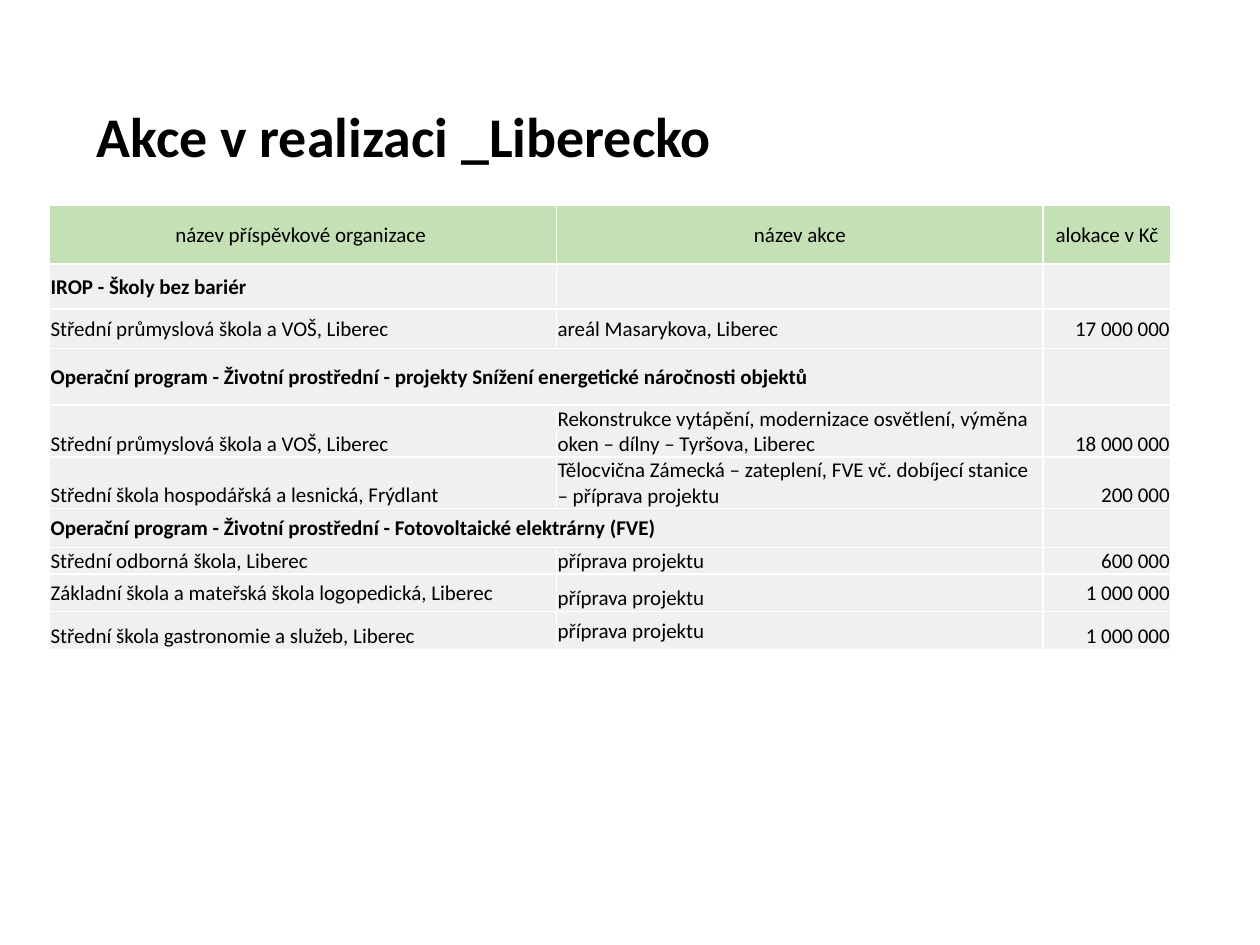
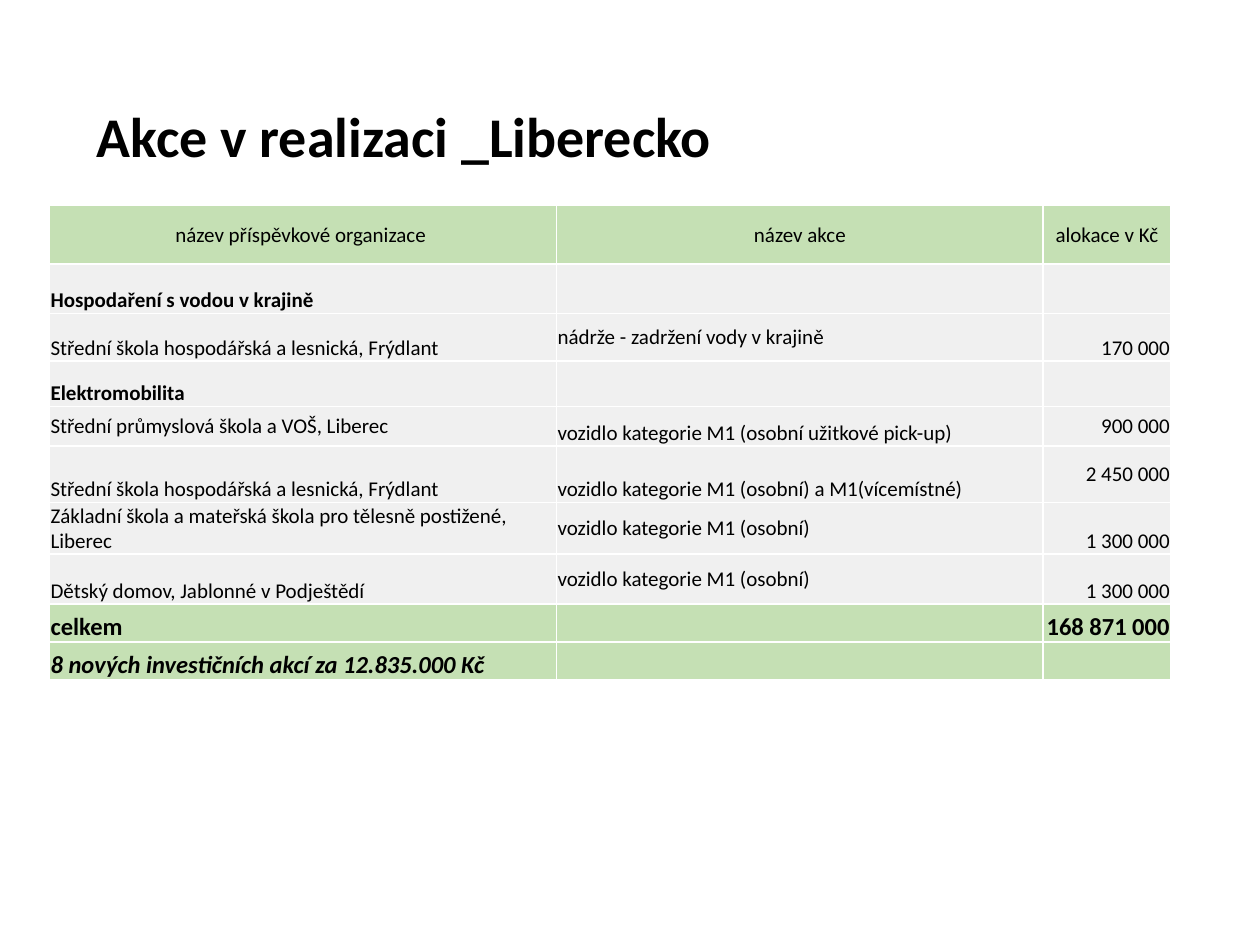
from dataclasses import dataclass

from lxml.etree import SubElement
from pptx import Presentation
from pptx.dml.color import RGBColor
from pptx.enum.text import MSO_ANCHOR, PP_ALIGN
from pptx.oxml.ns import qn
from pptx.util import Cm, Pt


@dataclass(frozen=True)
class Theme:
    font: str = "Calibri"
    ink: str = "000000"
    green: str = "C5E0B4"
    grey: str = "F0F0F0"
    border: str = "FFFFFF"
    title_size: int = 32
    body_size: int = 12
    total_size: int = 14


@dataclass(frozen=True)
class Row:
    """One table row; anchors holds a letter per column (m = middle, b = bottom)."""
    height: float
    texts: tuple
    anchors: str = "mmm"
    look: str = "item"
    wide: bool = False


THEME = Theme()
LOOKS = {
    "header": dict(fill=THEME.green, size=THEME.body_size, bold=False, italic=False),
    "program": dict(fill=THEME.grey, size=THEME.body_size, bold=True, italic=False),
    "item": dict(fill=THEME.grey, size=THEME.body_size, bold=False, italic=False),
    "total": dict(fill=THEME.green, size=THEME.total_size, bold=True, italic=False),
    "summary": dict(fill=THEME.green, size=THEME.total_size, bold=True, italic=True),
}
ANCHORS = {"m": MSO_ANCHOR.MIDDLE, "b": MSO_ANCHOR.BOTTOM}
ITEM_ALIGNS = (PP_ALIGN.LEFT, PP_ALIGN.LEFT, PP_ALIGN.RIGHT)
CELL_MARGINS = dict(margin_left=Cm(0.02), margin_right=Cm(0.02),
                    margin_top=Cm(0.02), margin_bottom=0)

TITLE = "Akce v realizaci _Liberecko"
COLUMN_WIDTHS = (10.22, 9.81, 2.57)
HEADER = Row(1.19, ("název příspěvkové organizace ", "název akce", "alokace v Kč"),
             look="header")

INDUSTRIAL = "Střední průmyslová škola a VOŠ, Liberec"
FORESTRY = "Střední škola hospodářská a lesnická, Frýdlant"
PREPARATION = "příprava projektu"
CAR = "vozidlo kategorie M1 (osobní)"

BUILDINGS = (
    Row(0.91, ("IROP - Školy bez bariér", "", ""), look="program"),
    Row(0.8, (INDUSTRIAL, "areál Masarykova, Liberec", "17 000 000")),
    Row(1.14, ("Operační program - Životní prostřední - projekty Snížení "
               "energetické náročnosti objektů", "", ""), look="program", wide=True),
    Row(1.04, (INDUSTRIAL, "Rekonstrukce vytápění, modernizace osvětlení, výměna "
               "oken – dílny – Tyršova, Liberec", "18 000 000"), "bmb"),
    Row(1.04, (FORESTRY, "Tělocvična Zámecká – zateplení, FVE vč. dobíjecí stanice "
               "– příprava projektu", "200 000"), "bbb"),
    Row(0.79, ("Operační program - Životní prostřední - Fotovoltaické elektrárny (FVE)",
               "", ""), look="program", wide=True),
    Row(0.53, ("Střední odborná škola, Liberec", PREPARATION, "600 000"), "mbm"),
    Row(0.76, ("Základní škola a mateřská škola logopedická, Liberec", PREPARATION,
               "1 000 000"), "mbm"),
    Row(0.76, ("Střední škola gastronomie a služeb, Liberec", PREPARATION,
               "1 000 000"), "bmb"),
)

WATER_AND_CARS = (
    Row(1.0, ("Hospodaření s vodou v krajině", "", ""), "bbb", "program"),
    Row(0.96, (FORESTRY, "nádrže - zadržení vody v krajině", "170 000"), "bmb"),
    Row(0.91, ("Elektromobilita", "", ""), "bbb", "program"),
    Row(0.8, (INDUSTRIAL, "vozidlo kategorie M1 (osobní užitkové pick-up)",
              "900 000"), "mbm"),
    Row(1.14, (FORESTRY, "vozidlo kategorie M1 (osobní) a M1(vícemístné)",
               "2 450 000"), "bbm"),
    Row(1.04, ("Základní škola a mateřská škola pro tělesně postižené, Liberec", CAR,
               "1 300 000"), "bmb"),
    Row(1.01, ("Dětský domov, Jablonné v Podještědí", CAR, "1 300 000"), "bmb"),
    Row(0.76, ("celkem", "", "168 871 000"), "bbb", "total"),
    Row(0.76, ("8 nových investičních akcí za 12.835.000 Kč", "", ""), "bbb", "summary"),
)


def apply(target, values):
    for name, value in values.items():
        setattr(target, name, value)


class Deck:
    def __init__(self, theme):
        self.theme = theme
        self.presentation = Presentation()
        apply(self.presentation, dict(slide_width=Cm(25.4), slide_height=Cm(19.05)))
        self.slide = None

    def new_slide(self):
        blank = self.presentation.slide_layouts[6]
        self.slide = self.presentation.slides.add_slide(blank)

    def add_text(self, paragraph, text, size, bold=False, italic=False):
        run = paragraph.add_run()
        run.text = text
        apply(run.font, dict(name=self.theme.font, size=Pt(size), bold=bold, italic=italic))
        run.font.color.rgb = RGBColor.from_string(self.theme.ink)

    def title(self, text):
        heading = self.slide.shapes.add_textbox(Cm(1.7), Cm(1.93), Cm(21.2), Cm(1.62))
        heading.text_frame.word_wrap = True
        self.add_text(heading.text_frame.paragraphs[0], text, self.theme.title_size, bold=True)

    def borders(self, cell):
        properties = cell._tc.get_or_add_tcPr()
        for side in ("lnL", "lnR", "lnT", "lnB"):
            line = SubElement(properties, qn(f"a:{side}"), w=str(Pt(1)))
            paint = SubElement(line, qn("a:solidFill"))
            SubElement(paint, qn("a:srgbClr"), val=self.theme.border)

    def cell(self, cell, text, anchor, align, look):
        apply(cell, dict(CELL_MARGINS, vertical_anchor=ANCHORS[anchor]))
        self.borders(cell)
        cell.fill.solid()
        cell.fill.fore_color.rgb = RGBColor.from_string(look["fill"])
        paragraph = cell.text_frame.paragraphs[0]
        paragraph.alignment = align
        if text:
            self.add_text(paragraph, text, look["size"], look["bold"], look["italic"])
        else:
            # Keeps an empty cell from stretching its row
            SubElement(paragraph._p, qn("a:endParaRPr"), sz=str(look["size"] * 100))

    def table(self, rows):
        height = sum(row.height for row in rows)
        table = self.slide.shapes.add_table(
            len(rows), len(COLUMN_WIDTHS), Cm(1.0), Cm(4.13),
            Cm(sum(COLUMN_WIDTHS)), Cm(height)).table
        apply(table, dict(first_row=False, horz_banding=False))
        for column, width in zip(table.columns, COLUMN_WIDTHS):
            column.width = Cm(width)
        for index, row in enumerate(rows):
            table.rows[index].height = Cm(row.height)
            aligns = (PP_ALIGN.CENTER,) * 3 if row.look == "header" else ITEM_ALIGNS
            for column, content in enumerate(zip(row.texts, row.anchors, aligns)):
                self.cell(table.cell(index, column), *content, LOOKS[row.look])
            if row.wide:
                table.cell(index, 0).merge(table.cell(index, 1))


def main():
    deck = Deck(THEME)
    for actions in (BUILDINGS, WATER_AND_CARS):
        deck.new_slide()
        deck.title(TITLE)
        deck.table((HEADER, *actions))
    deck.presentation.save("out.pptx")


if __name__ == "__main__":
    main()
